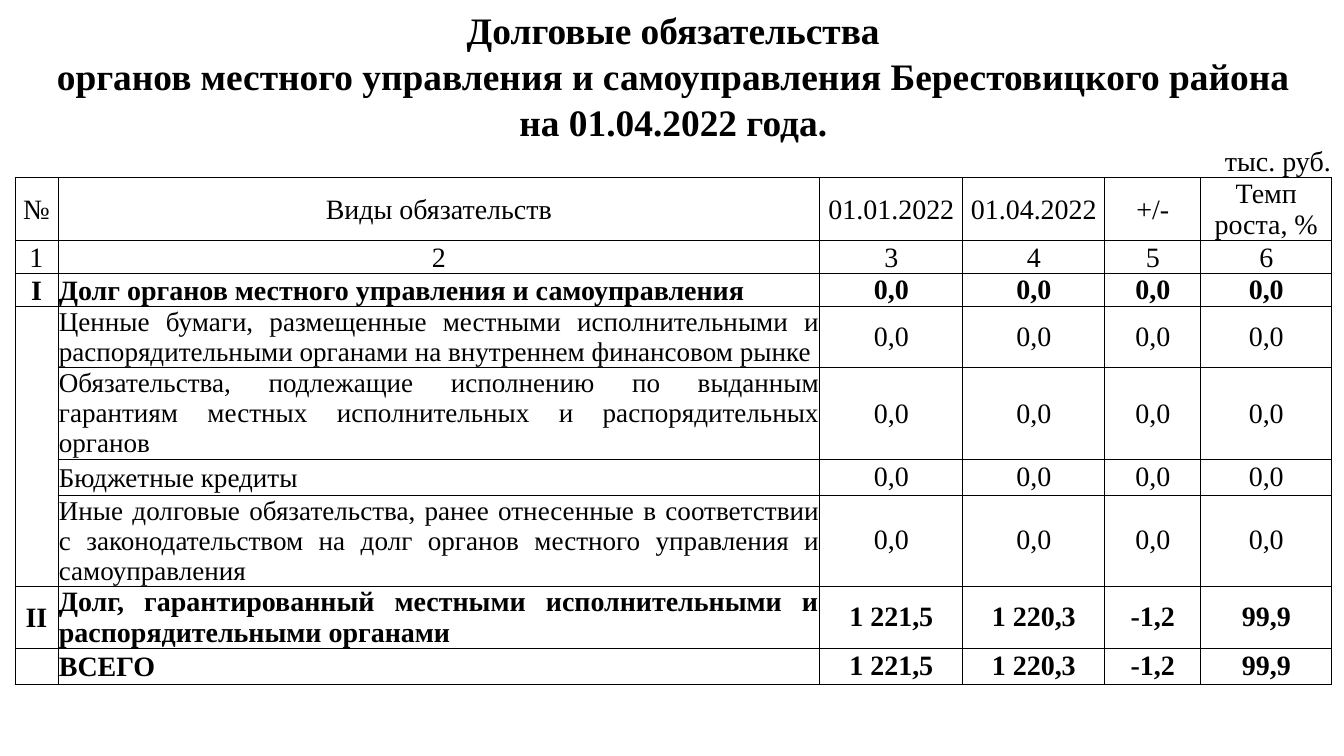
from dataclasses import dataclass

from lxml import etree
from pptx import Presentation
from pptx import util as u
from pptx.dml.color import RGBColor
from pptx.enum import text
from pptx.oxml.ns import qn

LEFT, CENTER, RIGHT, JUSTIFY = (text.PP_ALIGN.LEFT, text.PP_ALIGN.CENTER,
                                text.PP_ALIGN.RIGHT, text.PP_ALIGN.JUSTIFY)
TOP, MIDDLE, BOTTOM = (text.MSO_ANCHOR.TOP, text.MSO_ANCHOR.MIDDLE,
                       text.MSO_ANCHOR.BOTTOM)

COLUMNS = [43, 762, 143, 142, 96, 131]
ROWS = [46, 46, 46, 33, 63, 33, 33, 61, 92, 32, 91, 62, 35]
TITLE = ["Долговые обязательства",
         "органов местного управления и самоуправления Берестовицкого района",
         "на 01.04.2022 года."]
UNIT = "тыс. руб."
HEADER = ["№", "Виды обязательств", "01.01.2022", "01.04.2022", "+/-",
          "Темп\nроста, %"]
ZEROS = ["0,0"] * 4
TOTALS = ["1 221,5", "1 220,3", "-1,2", "99,9"]
DEBTS = [
    ("I", "Долг органов местного управления и самоуправления", ZEROS),
    ("", "Ценные бумаги, размещенные местными исполнительными и "
         "распорядительными органами на внутреннем финансовом рынке", ZEROS),
    ("", "Обязательства, подлежащие исполнению по выданным гарантиям "
         "местных исполнительных и распорядительных органов", ZEROS),
    ("", "Бюджетные кредиты", ZEROS),
    ("", "Иные долговые обязательства, ранее отнесенные в соответствии с "
         "законодательством на долг органов местного управления и "
         "самоуправления", ZEROS),
    ("II", "Долг, гарантированный местными исполнительными и "
           "распорядительными органами", TOTALS),
    ("", "ВСЕГО", TOTALS),
]


@dataclass(frozen=True)
class Theme:
    """Colours, font and type sizes of the slide."""
    ink: str = "000000"
    paper: str = "FFFFFF"
    font: str = "Times New Roman"
    title: float = 20
    body: float = 15
    detail: float = 14.5
    rule: float = 0.5


def px(n):
    """Convert slide pixels to EMU."""
    return u.Emu(round(n * 914400 / 134.4))


def write(tf, content, *, theme, size, bold=False, align=CENTER):
    """Fill a text frame, one paragraph per line."""
    for i, line in enumerate(content.split("\n")):
        p = tf.add_paragraph() if i else tf.paragraphs[0]
        p.alignment = align
        if not line:
            etree.SubElement(p._p, qn("a:endParaRPr"), sz=str(int(size * 100)))
            continue
        r = p.add_run()
        r.text = line
        r.font.name, r.font.size, r.font.bold = theme.font, u.Pt(size), bold
        r.font.color.rgb = RGBColor.from_string(theme.ink)


class Deck:
    """Holds the theme and the current slide."""

    def __init__(self, prs, theme):
        """Add a blank slide to draw on."""
        self.theme = theme
        self.slide = prs.slides.add_slide(prs.slide_layouts[6])

    def table(self, x, y, columns, rows):
        """Add a plain table with the given column widths and row heights."""
        tbl = self.slide.shapes.add_table(
            len(rows), len(columns), px(x), px(y),
            px(sum(columns)), px(sum(rows))).table
        tbl.first_row = tbl.horz_banding = False
        for column, w in zip(tbl.columns, columns):
            column.width = px(w)
        for row, h in zip(tbl.rows, rows):
            row.height = px(h)
        return tbl

    def borders(self, cell, sides):
        """Rule the named sides of a cell and clear the others."""
        tcPr = cell._tc.get_or_add_tcPr()
        for side in "LRTB":
            ln = etree.SubElement(tcPr, qn(f"a:ln{side}"),
                                  w=str(u.Pt(self.theme.rule)))
            if side in sides:
                fill = etree.SubElement(ln, qn("a:solidFill"))
                etree.SubElement(fill, qn("a:srgbClr"), val=self.theme.ink)
            else:
                etree.SubElement(ln, qn("a:noFill"))

    def cell(self, cell, content, *, sides="LRTB", anchor=MIDDLE, bottom=0,
             size=None, **fmt):
        """Style one cell and write its text."""
        self.borders(cell, sides)
        cell.fill.solid()
        cell.fill.fore_color.rgb = RGBColor.from_string(self.theme.paper)
        cell.margin_left = cell.margin_right = cell.margin_top = px(1)
        cell.margin_bottom = px(bottom)
        cell.vertical_anchor = anchor
        write(cell.text_frame, content, theme=self.theme,
              size=size or self.theme.body, **fmt)

    def banner(self, tbl, row, content, **fmt):
        """Write one line across the whole table width."""
        first, *rest = tbl.rows[row].cells
        first.merge(rest[-1])
        self.cell(first, content, anchor=BOTTOM, **fmt)
        for cell in rest:
            self.borders(cell, fmt["sides"])

    def debt(self, tbl, row, number, name, values, sides):
        """Write one debt line; sections and the total are bold."""
        total = name == "ВСЕГО"
        bold = bool(number) or total
        index, label, *amounts = tbl.rows[row].cells
        self.cell(index, number, sides=sides, bold=bold)
        self.cell(label, name, bold=bold, align=LEFT if total else JUSTIFY,
                  anchor=TOP if name.startswith("Обязательства") else MIDDLE,
                  size=self.theme.body if bold else self.theme.detail)
        for cell, value in zip(amounts, values):
            self.cell(cell, value, bold=bold, bottom=1)


def main():
    """Build the debt table slide."""
    prs = Presentation()
    prs.slide_width, prs.slide_height = px(1344), px(756)
    s = Deck(prs, Theme())
    tbl = s.table(15, 7, COLUMNS, ROWS)
    for row, line in enumerate(TITLE):
        s.banner(tbl, row, line, sides="", size=s.theme.title, bold=True)
    s.banner(tbl, 3, UNIT, sides="B", align=RIGHT)
    for i, heading in enumerate(HEADER):
        s.cell(tbl.cell(4, i), heading)
        s.cell(tbl.cell(5, i), str(i + 1), anchor=BOTTOM)
    group_sides = {7: "LRT", 8: "LR", 9: "LR", 10: "LRB"}
    for row, debt in enumerate(DEBTS, 6):
        s.debt(tbl, row, *debt, group_sides.get(row, "LRTB"))
    prs.save("out.pptx")


if __name__ == "__main__":
    main()
